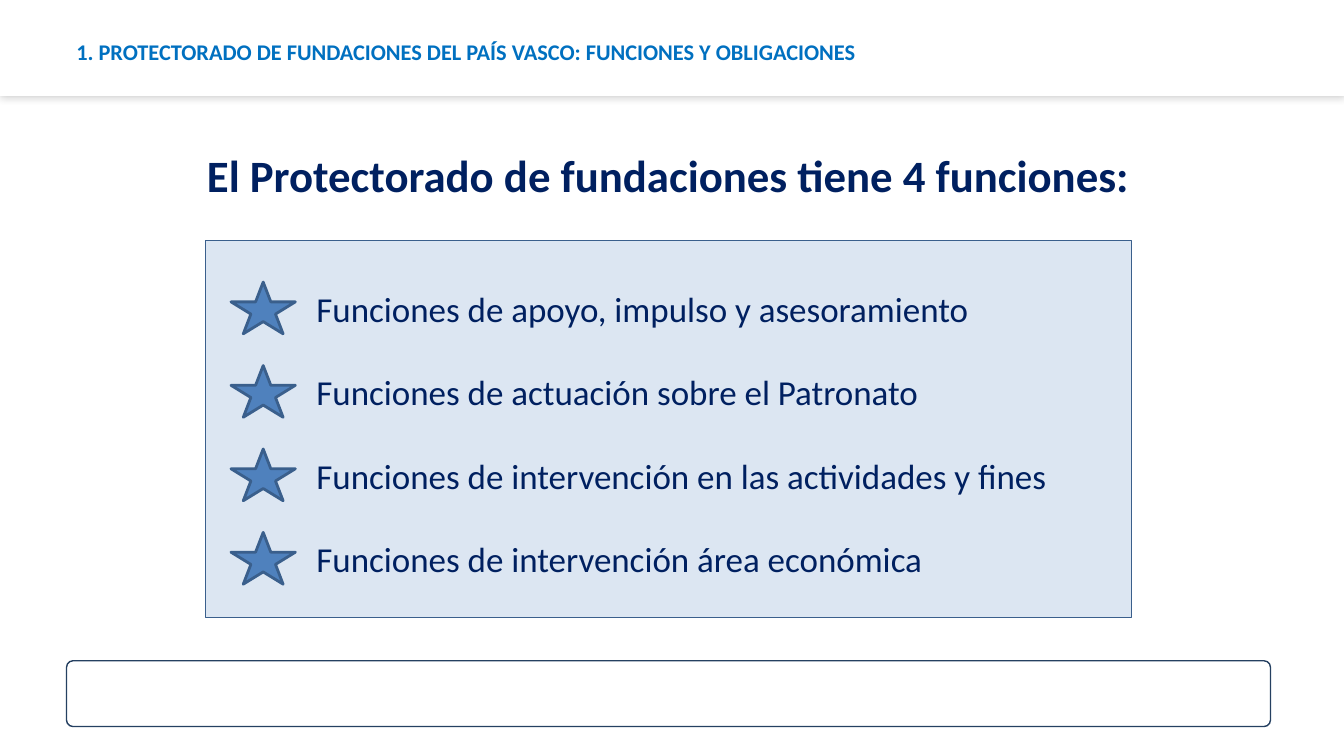
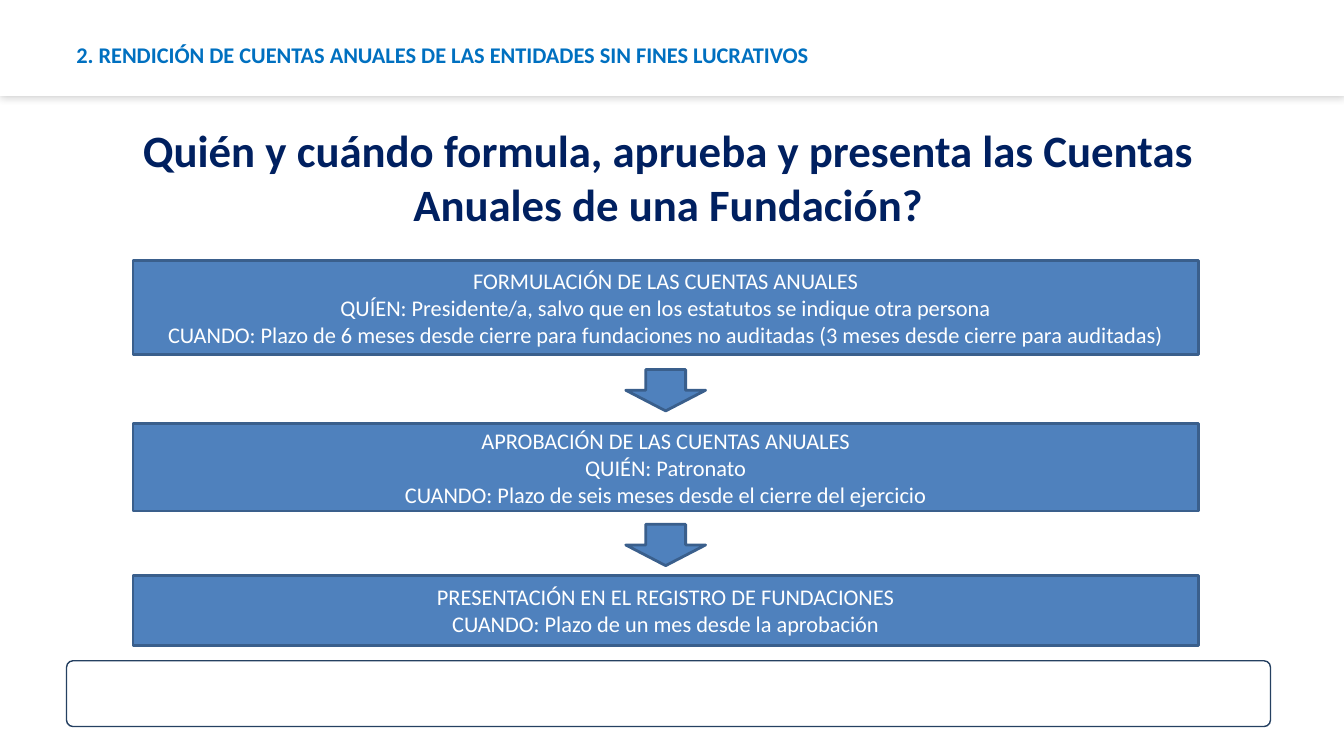
import lxml.etree
import pptx
import pptx.dml.color
import pptx.enum.shapes
import pptx.enum.text
import pptx.oxml.ns
import pptx.util

Pt = pptx.util.Pt
Kind = pptx.enum.shapes.MSO_SHAPE
Align = pptx.enum.text.PP_ALIGN
Anchor = pptx.enum.text.MSO_ANCHOR


def tint(code):
    return pptx.dml.color.RGBColor.from_string(code)


class Deck:
    FONT = "Calibri"
    WHITE = "FFFFFF"
    NAVY = "002060"
    SKY = "0070C0"
    BLUE = "4F81BD"
    PALE = "DCE6F2"
    EDGE = "3A5F8C"
    FRAME = "254061"

    def __init__(self):
        self.show = pptx.Presentation()
        self.show.slide_width = Pt(960)
        self.show.slide_height = Pt(540)
        self.slide = None

    def page(self, label, top):
        self.slide = self.show.slides.add_slide(self.show.slide_layouts[6])
        foot = self.shape(Kind.ROUNDED_RECTANGLE, (47.5, 472, 860, 47), self.WHITE, self.FRAME, 1)
        foot.adjustments[0] = 0.1
        band = self.shape(Kind.RECTANGLE, (0, 0, 960, 68.5), self.WHITE)
        self.shade(band)
        self.text((49.5, top, 863, 52), label, 16, self.SKY, Align.LEFT, Anchor.MIDDLE, 5)

    def shade(self, shape):
        tag = pptx.oxml.ns.qn
        glow = lxml.etree.SubElement(
            shape._element.spPr.find(tag("a:effectLst")), tag("a:outerShdw"),
            blurRad=str(Pt(6)), dist="0", dir="13500000", algn="ctr", rotWithShape="0")
        black = lxml.etree.SubElement(glow, tag("a:srgbClr"), val="000000")
        lxml.etree.SubElement(black, tag("a:alpha"), val="20000")

    def shape(self, kind, box, fill, line=None, width=2):
        shape = self.slide.shapes.add_shape(kind, *map(Pt, box))
        shape.shadow.inherit = False
        shape.fill.solid()
        shape.fill.fore_color.rgb = tint(fill)
        if line:
            shape.line.color.rgb = tint(line)
            shape.line.width = Pt(width)
        else:
            shape.line.fill.background()
        return shape

    def fill(self, frame, lines, size, ink, align, bold=False, gap=0):
        frame.word_wrap = True
        for rank, line in enumerate(lines):
            para = frame.paragraphs[0] if rank == 0 else frame.add_paragraph()
            para.text = line
            para.alignment = align
            if rank and gap:
                para.space_before = Pt(gap)
            para.font.name = self.FONT
            para.font.size = Pt(size)
            para.font.bold = bold
            para.font.color.rgb = tint(ink)

    def text(self, box, words, size, ink, align, anchor=Anchor.TOP, inset=7.2):
        frame = self.slide.shapes.add_textbox(*map(Pt, box)).text_frame
        frame.margin_left = frame.margin_right = Pt(inset)
        frame.vertical_anchor = anchor
        self.fill(frame, [words], size, ink, align, True)

    def heading(self, words, top, height):
        self.text((78.5, top, 798, height), words, 32, self.NAVY, Align.CENTER)

    def panel(self, box, lines):
        frame = self.shape(Kind.RECTANGLE, box, self.PALE, self.EDGE, 0.75).text_frame
        frame.vertical_anchor = Anchor.TOP
        frame.margin_left = Pt(79)
        frame.margin_top = Pt(33.5)
        self.fill(frame, lines, 25, self.NAVY, Align.LEFT, gap=29.5)

    def star(self, top):
        self.shape(Kind.STAR_5_POINT, (165, top, 46, 37), self.BLUE, self.EDGE)

    def step(self, top, height, lines):
        frame = self.shape(Kind.RECTANGLE, (95, top, 761, height), self.BLUE, self.EDGE).text_frame
        frame.vertical_anchor = Anchor.MIDDLE
        self.fill(frame, lines, 16, self.WHITE, Align.CENTER)

    def arrow(self, top):
        self.shape(Kind.DOWN_ARROW, (447, top, 57, 29.5), self.BLUE, self.EDGE)


def main():
    deck = Deck()

    deck.page("1. PROTECTORADO DE FUNDACIONES DEL PAÍS VASCO: FUNCIONES Y OBLIGACIONES", 11)
    roles = [
        "Funciones de apoyo, impulso y asesoramiento",
        "Funciones de actuación sobre el Patronato",
        "Funciones de intervención en las actividades y fines",
        "Funciones de intervención área económica",
    ]
    deck.panel((147, 172, 661.5, 269), roles)
    for rank in range(len(roles)):
        deck.star(201.5 + 59.6 * rank)
    deck.heading("El Protectorado de fundaciones tiene 4 funciones:", 102, 46)

    deck.page("2. RENDICIÓN DE CUENTAS ANUALES DE LAS ENTIDADES SIN FINES LUCRATIVOS", 13)
    deck.heading("Quién y cuándo formula, aprueba y presenta las Cuentas Anuales de una Fundación?", 84, 85)
    steps = [
        (186, 67.5, [
            "FORMULACIÓN DE LAS CUENTAS ANUALES",
            "QUÍEN: Presidente/a, salvo que en los estatutos se indique otra persona",
            "CUANDO: Plazo de 6 meses desde cierre para fundaciones no auditadas (3 meses desde cierre para auditadas)",
        ]),
        (302.5, 62.5, [
            "APROBACIÓN DE LAS CUENTAS ANUALES",
            "QUIÉN: Patronato",
            "CUANDO: Plazo de seis meses desde el cierre del ejercicio",
        ]),
        (411, 50, [
            "PRESENTACIÓN EN EL REGISTRO DE FUNDACIONES",
            "CUANDO: Plazo de un mes desde la aprobación",
        ]),
    ]
    for top, height, lines in steps:
        deck.step(top, height, lines)
    for top in (264, 374.5):
        deck.arrow(top)

    deck.show.save("out.pptx")


if __name__ == "__main__":
    main()
